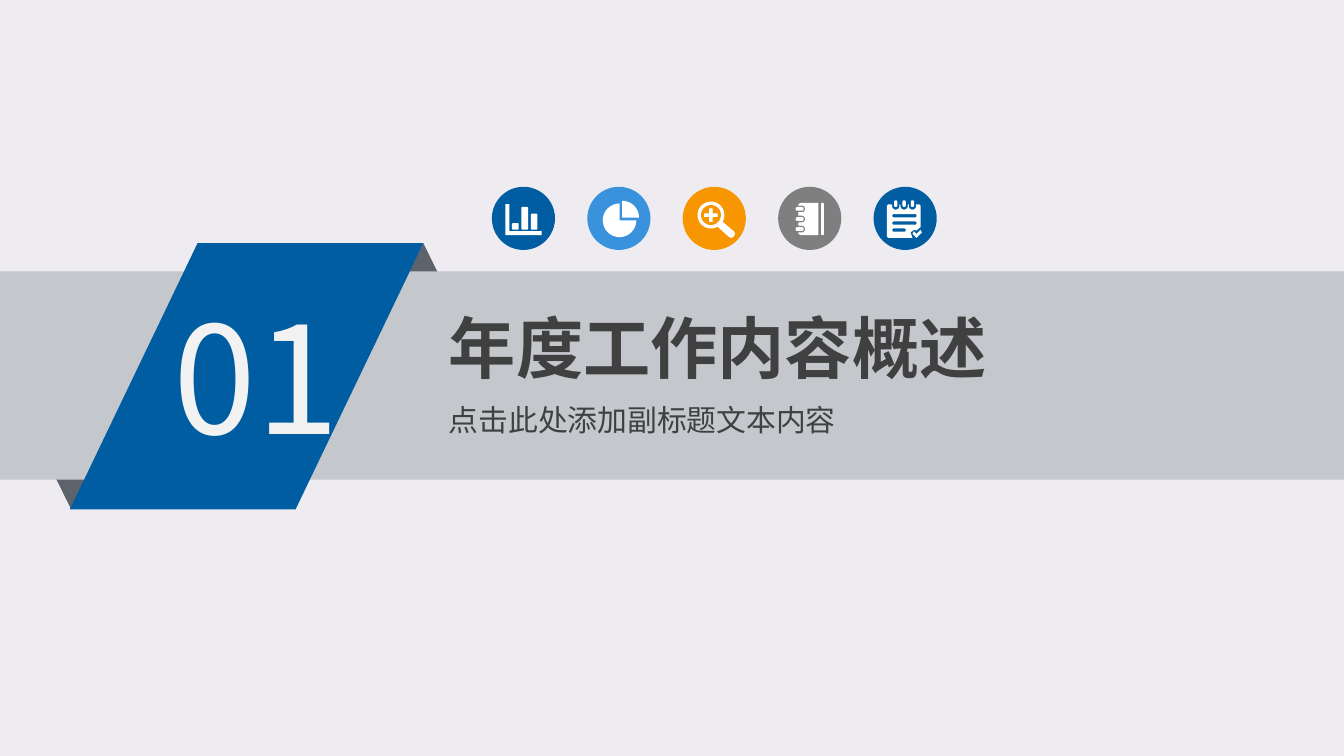
from math import cos, radians, sin

from lxml import etree
from pptx import Presentation
from pptx.dml.color import RGBColor
from pptx.enum import shapes, text
from pptx.oxml.ns import qn
from pptx.util import Inches, Pt

PAPER = RGBColor(0xEE, 0xEC, 0xF1)
BAND = RGBColor(0xC4, 0xC7, 0xCB)
FOLD = RGBColor(0x5D, 0x63, 0x6A)
BLUE = RGBColor(0x00, 0x5D, 0xA2)
SKY = RGBColor(0x39, 0x92, 0xDB)
ORANGE = RGBColor(0xF7, 0x96, 0x00)
GREY = RGBColor(0x7F, 0x7F, 0x7F)
WHITE = RGBColor(0xFF, 0xFF, 0xFF)
PALE = RGBColor(0xF2, 0xF2, 0xF2)
DARK = RGBColor(0x40, 0x40, 0x40)
FONT = "Noto Sans CJK SC"

DISC_LEFT, DISC_TOP, DISC_SIZE, DISC_STEP = 3.66, 1.39, 0.47, 0.71


def paint(shape, color):
    shape.shadow.inherit = False
    shape.fill.solid()
    shape.fill.fore_color.rgb = color
    shape.line.fill.background()


def add_block(parent, kind, left, top, width, height, color):
    block = parent.shapes.add_shape(
        kind, Inches(left), Inches(top), Inches(width), Inches(height))
    paint(block, color)
    return block


def add_label(parent, words, left, top, width, height, size, color, inset, bold=False):
    box = parent.shapes.add_textbox(
        Inches(left), Inches(top), Inches(width), Inches(height))
    frame = box.text_frame
    frame.word_wrap = True
    frame.auto_size = text.MSO_AUTO_SIZE.SHAPE_TO_FIT_TEXT
    frame.margin_left = frame.margin_right = Inches(inset)
    frame.margin_top = frame.margin_bottom = Inches(0.04)
    span = frame.paragraphs[0].add_run()
    span.text = words
    span.font.name = FONT
    span.font.size = Pt(size)
    span.font.bold = bold
    span.font.color.rgb = color
    east_asian = etree.SubElement(span.font._element, qn("a:ea"))
    east_asian.set("typeface", FONT)


# Icon outlines are lists of points in hundredths of an inch from the disc's corner.

def arc(x, y, radius, start, end, steps=24):
    """Points along a circle; angles in degrees, clockwise from the right."""
    angles = [radians(start + (end - start) * i / steps) for i in range(steps + 1)]
    return [(x + radius * cos(a), y + radius * sin(a)) for a in angles]


def rounded(left, top, right, bottom, radius=1):
    corners = [(right - radius, bottom - radius, 0), (left + radius, bottom - radius, 90),
               (left + radius, top + radius, 180), (right - radius, top + radius, 270)]
    return [point for x, y, start in corners
            for point in arc(x, y, radius, start, start + 90, 6)]


def bar_chart_icon():
    axes = [(10, 13), (13, 13), (13, 33), (37, 33), (37, 36), (10, 36)]
    bars = [rounded(left, top, left + 5, 32) for left, top in ((15, 27), (22, 15), (29, 20))]
    return [axes] + bars


def pie_icon():
    return [[(26, 23)] + arc(26, 23, 12.5, -90, 0),
            [(24, 25)] + arc(24, 25, 12.5, 0, 270)]


def magnifier_icon():
    handle = [(38, 33), (39, 35), (38, 37), (36, 38), (34, 37)]
    arm, half = 5, 1.3
    plus = [(-half, -arm), (half, -arm), (half, -half), (arm, -half), (arm, half), (half, half),
            (half, arm), (-half, arm), (-half, half), (-arm, half), (-arm, -half), (-half, -half)]
    return [arc(21, 21, 10, 60, 390, 40) + handle,
            arc(21, 21, 7.5, 360, 0, 40),
            [(21 + x, 21 + y) for x, y in plus]]


def notebook_icon():
    holes = (16.5, 24, 31.5)
    cover = [(15, 13), (17, 12), (30, 12), (30, 36), (17, 36), (15, 35)]
    for y in reversed(holes):
        cover += [(15, y + 2.5)] + arc(17.5, y, 2.5, 90, -90) + [(15, y - 2.5)]
    rings = [rounded(13, y - 1.4, 19, y + 1.4, 1.3) for y in holes]
    return [cover, rounded(32, 12, 34, 36, 0.8)] + rings


def checklist_icon():
    holes = (16.5, 22.75, 29)
    sheet = [(10, 14), (11, 13)]
    for x in holes:
        sheet += [(x - 2.75, 13)] + arc(x, 14.2, 2.75, 180, 0) + [(x + 2.75, 13)]
    sheet += [(34, 13), (35, 14), (35, 30), (32, 32.5), (30, 32), (27.5, 34),
              (29, 38), (11, 38), (10, 37)]
    rings = [rounded(x - 1.25, 10, x + 1.25, 15, 1.2) for x in holes]
    lines = [rounded(14, top, right, top + 2.4)
             for top, right in ((20.3, 32), (25.8, 32), (31, 24))]
    tick = [(29, 35), (30, 33), (32, 35), (35, 32), (36, 34), (32, 38)]
    return [sheet, tick] + rings + lines


def add_icon(page, left, color, outlines):
    group = page.shapes.add_group_shape()
    add_block(group, shapes.MSO_SHAPE.OVAL, left, DISC_TOP, DISC_SIZE, DISC_SIZE, color)
    placed = [[(Inches(left + x / 100), Inches(DISC_TOP + y / 100)) for x, y in outline]
              for outline in outlines]
    builder = group.shapes.build_freeform(*placed[0][0])
    builder.add_line_segments(placed[0][1:], close=True)
    for outline in placed[1:]:
        builder.move_to(*outline[0])
        builder.add_line_segments(outline[1:], close=True)
    paint(builder.convert_to_shape(), WHITE)


def add_ribbon(page):
    group = page.shapes.add_group_shape()
    kinds = shapes.MSO_SHAPE
    add_block(group, kinds.ISOSCELES_TRIANGLE, 2.7, 1.81, 0.9, 0.91, FOLD)
    lower_fold = add_block(group, kinds.ISOSCELES_TRIANGLE, 0.08, 2.88, 0.9, 0.91, FOLD)
    lower_fold.rotation = 180
    add_block(group, kinds.RECTANGLE, 0, 2.02, 10, 1.55, BAND)
    plate = add_block(group, kinds.PARALLELOGRAM, 0.52, 1.81, 2.63, 1.98, BLUE)
    plate.adjustments[0] = 0.48
    add_label(group, "01", 1.22, 2.08, 1.45, 1.42, 80, PALE, 0.07)


def main():
    deck = Presentation()
    deck.slide_width = Inches(10)
    deck.slide_height = deck.slide_width * 9 // 16
    page = deck.slides.add_slide(deck.slide_layouts[6])
    page.background.fill.solid()
    page.background.fill.fore_color.rgb = PAPER

    add_ribbon(page)
    add_label(page, "年度工作内容概述", 3.26, 2.24, 5.52, 0.68, 36, DARK, 0.08, bold=True)
    add_label(page, "点击此处添加副标题文本内容", 3.26, 2.95, 3.36, 0.35, 16, DARK, 0.08)

    icons = [(BLUE, bar_chart_icon), (SKY, pie_icon), (ORANGE, magnifier_icon),
             (GREY, notebook_icon), (BLUE, checklist_icon)]
    for index, (color, draw) in enumerate(icons):
        add_icon(page, DISC_LEFT + index * DISC_STEP, color, draw())

    deck.save("out.pptx")


if __name__ == "__main__":
    main()
